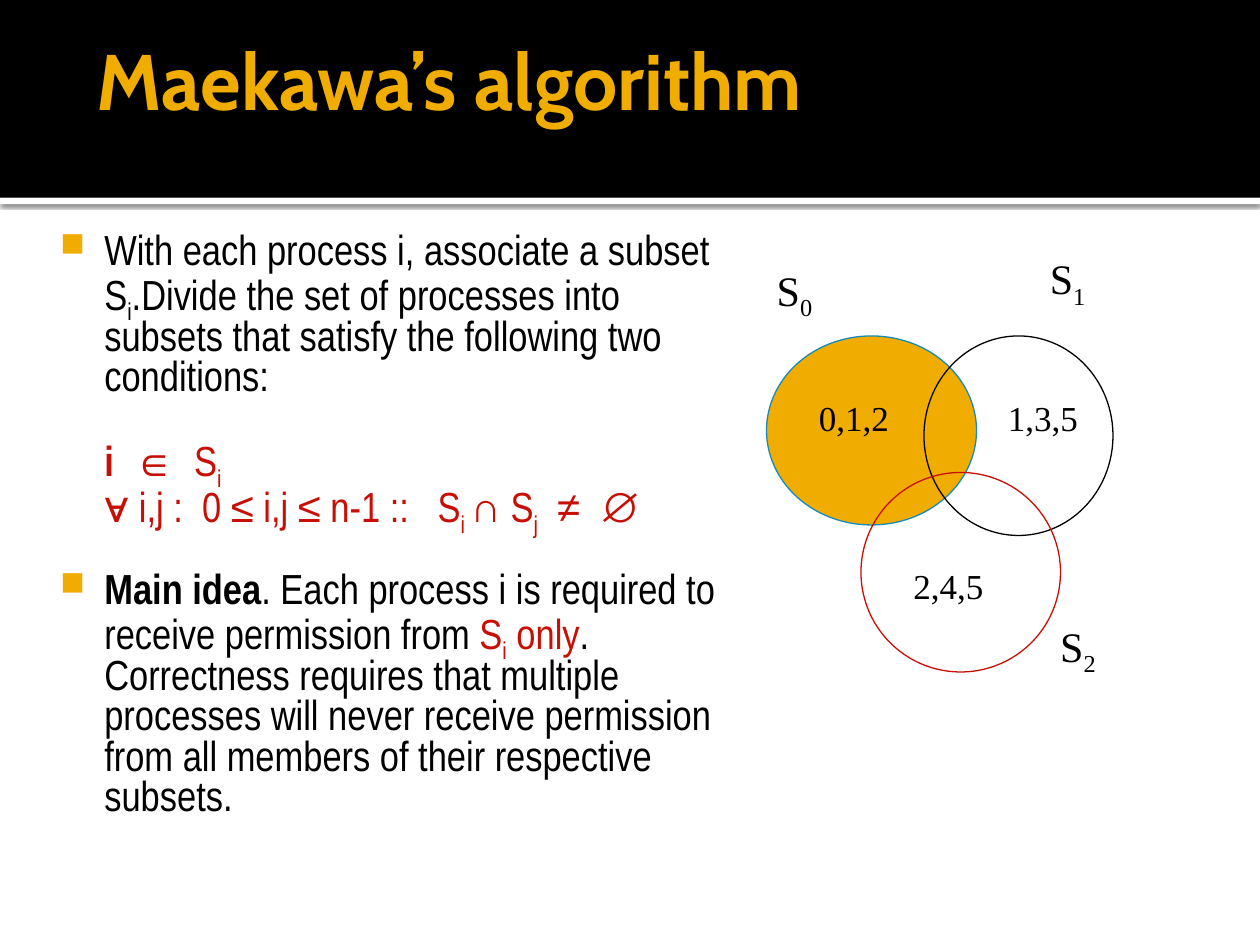
from lxml import etree
from pptx import Presentation
from pptx.dml.color import RGBColor
from pptx.enum.shapes import MSO_SHAPE as SHAPE
from pptx.enum.text import MSO_ANCHOR as ANCHOR, MSO_AUTO_SIZE as AUTO
from pptx.oxml import parse_xml
from pptx.oxml.ns import nsdecls, qn
from pptx.util import Inches, Pt

prs = Presentation()
prs.slide_width, prs.slide_height = Inches(10), Inches(7.5)
s = prs.slides.add_slide(prs.slide_layouts[6])
COL, ROW = prs.slide_width / 120, prs.slide_height / 90
BLACK, WHITE, GOLD, RED, BLUE = "000000", "FFFFFF", "F0AD00", "C70F05", "168BBA"


def rgb(value):
    return RGBColor.from_string(value)


def add_run(p, text, color, base=0, **font):
    r = p.add_run()
    r.text = text
    for key, value in font.items():
        setattr(r.font, key, value)
    r.font.color.rgb = rgb(color)
    if base:
        r.font._element.set("baseline", str(base * 1000))


shapes = [
    (SHAPE.RECTANGLE, 0, 18.84, 120, 0.6, WHITE, None),
    (SHAPE.RECTANGLE, 0, 0, 120, 18.84, BLACK, None),
    (SHAPE.OVAL, 73, 32, 20, 18, GOLD, BLUE),
    (SHAPE.OVAL, 88, 32, 18, 19, None, BLACK),
    (SHAPE.OVAL, 82, 45, 19, 19, None, RED),
]
for kind, x, y, w, h, fill, line in shapes:
    sp = s.shapes.add_shape(kind, int(x * COL), int(y * ROW), int(w * COL), int(h * ROW))
    sp.shadow.inherit = False
    if fill:
        sp.fill.solid()
        sp.fill.fore_color.rgb = rgb(fill)
    else:
        sp.fill.background()
    if line:
        sp.line.color.rgb = rgb(line)
        sp.line.width = Pt(0.75)
    else:
        sp.line.fill.background()

effects = s.shapes[0]._element.spPr.find(qn("a:effectLst"))
effects.append(parse_xml(
    f'<a:outerShdw {nsdecls("a")} blurRad="{Pt(2.5)}" dist="{Pt(0.8)}" dir="5400000" rotWithShape="0">'
    '<a:srgbClr val="000000"><a:alpha val="60000"/></a:srgbClr></a:outerShdw>'))

title = {"name": "Cabin", "size": Pt(45), "bold": True}
body = {"name": "Arial Narrow", "size": Pt(24), "bold": False}
strong = {**body, "bold": True}
member = {"name": "Times New Roman", "size": Pt(20)}
label = {"name": "Times New Roman", "size": Pt(24)}

tf = s.shapes.add_textbox(int(8 * COL), 0, int(102 * COL), int(15 * ROW)).text_frame
for key, value in {"word_wrap": True, "vertical_anchor": ANCHOR.MIDDLE, "margin_right": Inches(0.05)}.items():
    setattr(tf, key, value)
add_run(tf.paragraphs[0], "Maekawa’s algorithm", GOLD, **title)

paragraphs = [
    (True, 0, [
        ("With each process i, associate a subset S", BLACK, 0, body),
        ("i", BLACK, -25, body),
        (".Divide the set of processes into subsets that satisfy the following two conditions:", BLACK, 0, body)]),
    (False, 23, [
        ("i  ∈  ", RED, 0, strong),
        ("S", RED, 0, body),
        ("i", RED, -25, body)]),
    (False, 0, [
        ("∀ i,j :  0 ≤ i,j ≤ n-1 ::   S", RED, 0, body),
        ("i ", RED, -25, body),
        ("∩ S", RED, 0, body),
        ("j", RED, -25, body),
        ("  ≠  ∅", RED, 0, body)]),
    (True, 23, [
        ("Main idea", BLACK, 0, strong),
        (". Each process i is required to receive permission from ", BLACK, 0, body),
        ("S", RED, 0, body),
        ("i", RED, -25, body),
        (" only", RED, 0, body),
        (". Correctness requires that multiple processes will never receive permission "
         "from all members of their respective subsets.", BLACK, 0, body)]),
]
tf = s.shapes.add_textbox(int(3 * COL), int(21 * ROW), int(67 * COL), int(65 * ROW)).text_frame
tf.word_wrap = True
tf.margin_top = Inches(0.1)
for i, (bullet, before, runs) in enumerate(paragraphs):
    p = tf.add_paragraph() if i else tf.paragraphs[0]
    p.line_spacing = 0.8
    p.space_before = Pt(before)
    pPr = p._p.get_or_add_pPr()
    pPr.set("marL", str(Inches(0.48)))
    pPr.set("indent", str(-Inches(0.35) if bullet else 0))
    if bullet:
        color = etree.SubElement(pPr, qn("a:buClr"))
        etree.SubElement(color, qn("a:srgbClr"), val=GOLD)
        etree.SubElement(pPr, qn("a:buSzPct"), val="80000")
        etree.SubElement(pPr, qn("a:buChar"), char="■")
    for text, color, base, font in runs:
        add_run(p, text, color, base, **font)

labels = [
    (76.8, 37.2, 9.12, 5.2, "0,1,2", "", member),
    (94.8, 37.2, 9.12, 5.2, "1,3,5", "", member),
    (85.8, 53.2, 9.12, 5.2, "2,4,5", "", member),
    (72.8, 24.6, 6, 6, "S", "0", label),
    (98.8, 23.5, 6, 6, "S", "1", label),
    (99.8, 58.5, 6, 6, "S", "2", label),
]
for x, y, w, h, text, sub, font in labels:
    tf = s.shapes.add_textbox(int(x * COL), int(y * ROW), int(w * COL), int(h * ROW)).text_frame
    tf.word_wrap = False
    tf.auto_size = AUTO.SHAPE_TO_FIT_TEXT
    add_run(tf.paragraphs[0], text, BLACK, **font)
    if sub:
        add_run(tf.paragraphs[0], sub, BLACK, -25, **font)

prs.save("out.pptx")
